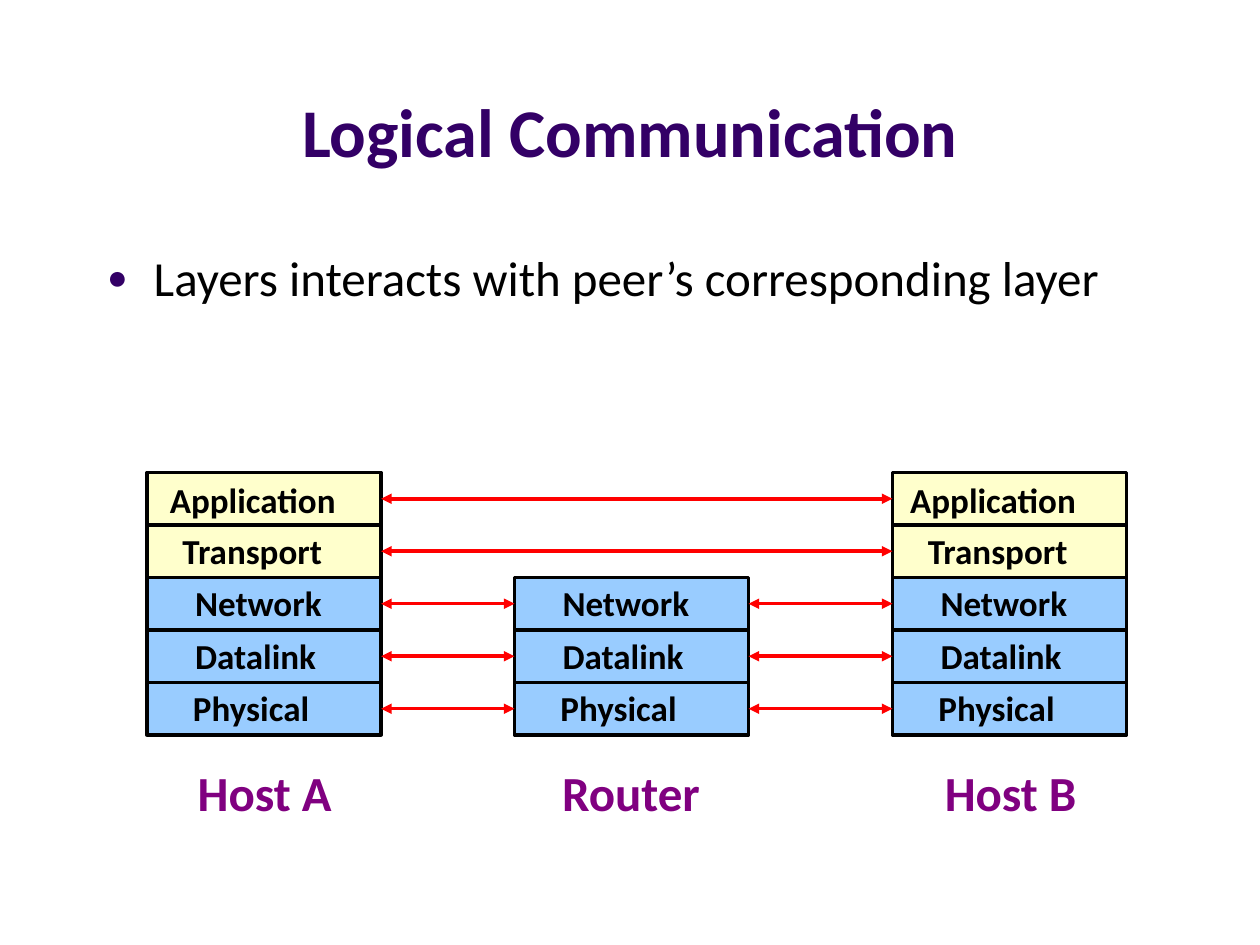
from lxml import etree
from pptx import Presentation
from pptx import util as u
from pptx.dml.color import RGBColor
from pptx.enum import shapes, text
from pptx.oxml.ns import qn

COLUMNS, ROWS = 120, 18
COLUMN = u.Inches(10) / COLUMNS
ROW = u.Inches(7.5) / ROWS
TOP_ROW = 9
BOX_COLUMNS = 22.3
COLORS = {
    "title": "330066",
    "text": "000000",
    "upper": "FFFFCC",
    "lower": "99CCFF",
    "arrow": "FF0000",
    "host": "800080",
}
# layer: fill, label indent and label width in columns
LAYERS = {
    "Application": ("upper", 1, 18.6),
    "Transport": ("upper", 2.2, 16.1),
    "Network": ("lower", 3.4, 14.6),
    "Datalink": ("lower", 3.4, 14.2),
    "Physical": ("lower", 3.2, 13.7),
}
# node: left column, first layer, name indent and name width in columns
NODES = {
    "Host A": (14, 0, 3.5, 15.4),
    "Router": (49, 2, 3.2, 15.8),
    "Host B": (85, 0, 3.7, 15.1),
}


def color(name):
    return RGBColor.from_string(COLORS[name])


def grid(left, top, width, height):
    """Turn columns and rows into lengths on the slide."""
    return [u.Emu(round(n)) for n in
            (left * COLUMN, top * ROW, width * COLUMN, height * ROW)]


def style(para, size, color_name, bold=False):
    para.font.name = "Calibri"
    para.font.size = u.Pt(size)
    para.font.bold = bold
    para.font.color.rgb = color(color_name)


def fill_placeholder(holder, place, words, size, color_name, bold=False):
    holder.left, holder.top, holder.width, holder.height = place
    frame = holder.text_frame
    frame.text = words
    frame.auto_size = text.MSO_AUTO_SIZE.NONE
    style(frame.paragraphs[0], size, color_name, bold)
    return frame


def add_bullet(para):
    props = para._p.get_or_add_pPr()
    props.set("marL", str(u.Inches(0.37)))
    props.set("indent", str(-u.Inches(0.37)))
    tint = etree.SubElement(props, qn("a:buClr"))
    etree.SubElement(tint, qn("a:srgbClr"), val=COLORS["title"])
    etree.SubElement(props, qn("a:buSzPct"), val="70000")
    etree.SubElement(props, qn("a:buChar"), char="●")


def add_label(page, place, words, size, color_name, align):
    frame = page.shapes.add_textbox(*place).text_frame
    frame.word_wrap = False
    frame.auto_size = text.MSO_AUTO_SIZE.SHAPE_TO_FIT_TEXT
    para = frame.paragraphs[0]
    para.text = words
    para.alignment = align
    style(para, size, color_name, bold=True)


def add_box(page, place, fill):
    box = page.shapes.add_shape(shapes.MSO_SHAPE.RECTANGLE, *place)
    box.shadow.inherit = False
    box.fill.solid()
    box.fill.fore_color.rgb = color(fill)
    box.line.color.rgb = color("text")
    box.line.width = u.Pt(2)
    return box


def add_stack(page, node):
    """Draw the layers and name of a node; return its boxes by layer."""
    left, first, name_indent, name_width = NODES[node]
    boxes = {}
    for index, (layer, (fill, indent, width)) in enumerate(LAYERS.items()):
        if index < first:
            continue
        row = TOP_ROW + index
        boxes[layer] = add_box(page, grid(left, row, BOX_COLUMNS, 1), fill)
        if node == "Host B" and layer == "Application":
            indent = 0.5
        lift = 0.04 if index else 0
        add_label(page, grid(left + indent, row - lift, width, 1.06),
                  layer, 20, "text", text.PP_ALIGN.LEFT)
    add_label(page, grid(left + name_indent, 14.4, name_width, 1.36),
              node, 28, "host", text.PP_ALIGN.CENTER)
    return boxes


def add_arrow(page, start, end):
    """Join the right side of one box to the left side of another."""
    arrow = page.shapes.add_connector(shapes.MSO_CONNECTOR.STRAIGHT, 0, 0, 0, 0)
    arrow.begin_connect(start, 3)
    arrow.end_connect(end, 1)
    arrow.line.color.rgb = color("arrow")
    arrow.line.width = u.Pt(2)
    line = arrow.line._get_or_add_ln()
    for tip in ("a:headEnd", "a:tailEnd"):
        etree.SubElement(line, qn(tip), type="triangle")
    etree.SubElement(arrow._element.spPr, qn("a:effectLst"))


def main():
    deck = Presentation()
    deck.slide_width, deck.slide_height = u.Inches(10), u.Inches(7.5)
    page = deck.slides.add_slide(deck.slide_layouts[1])

    title = fill_placeholder(page.shapes.title, grid(6, 0.31, 108, 3.07),
                             "Logical Communication", 39, "title", bold=True)
    title.vertical_anchor = text.MSO_ANCHOR.BOTTOM
    body = fill_placeholder(page.placeholders[1], grid(9, 4.6, 106, 2),
                            "Layers interacts with peer’s corresponding layer",
                            28, "text")
    add_bullet(body.paragraphs[0])

    stacks = [add_stack(page, node) for node in NODES]
    for layer in LAYERS:
        peers = [boxes[layer] for boxes in stacks if layer in boxes]
        for start, end in zip(peers, peers[1:]):
            add_arrow(page, start, end)

    deck.save("out.pptx")


if __name__ == "__main__":
    main()
